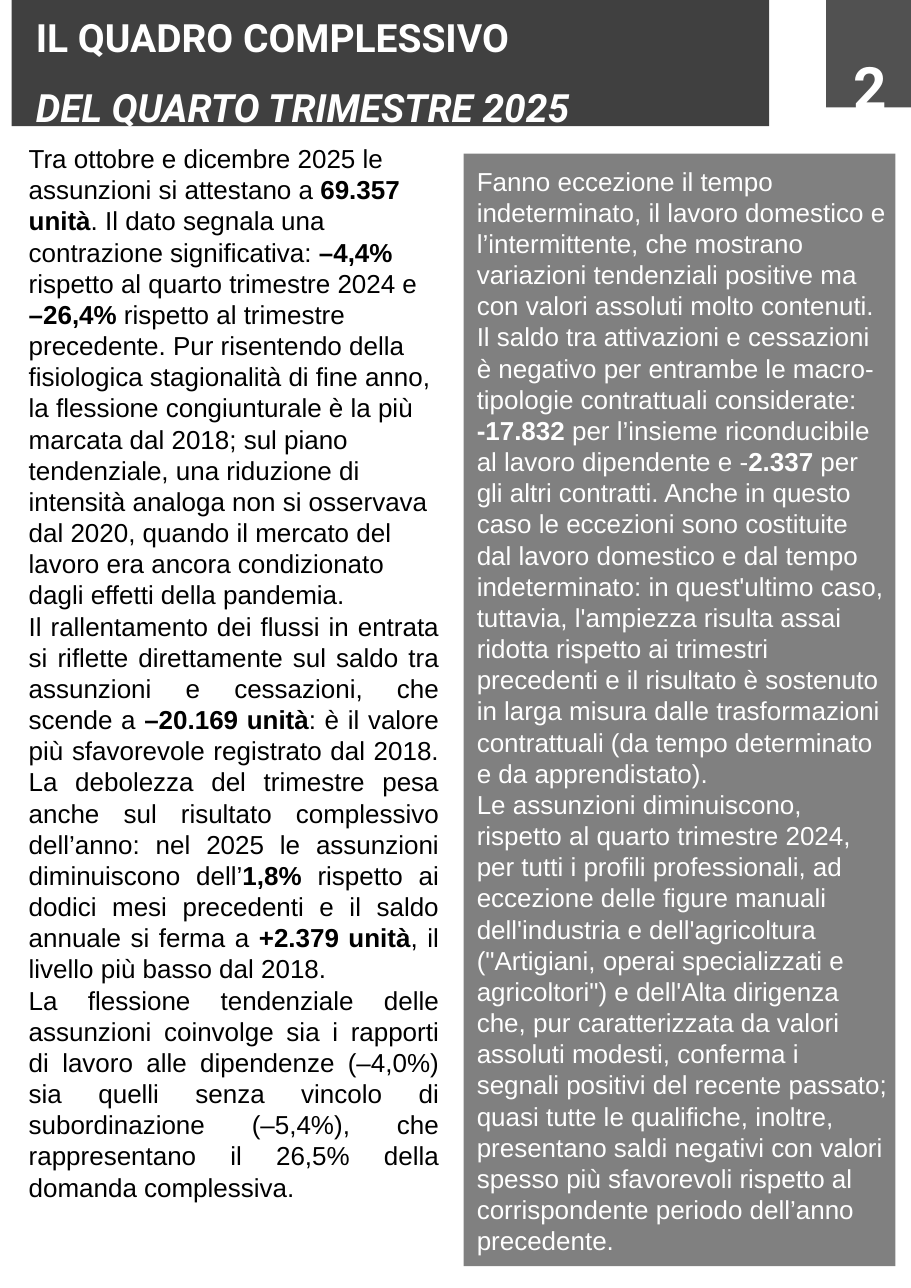
from pptx import Presentation, util as u
from pptx.dml.color import RGBColor
from pptx.enum import shapes, text

COLORS = {"band": "404040", "tab": "515151", "panel": "808080",
          "light": "FFFFFF", "dark": "000000"}

TITLE = ["IL QUADRO COMPLESSIVO", "DEL QUARTO TRIMESTRE 2025"]

LEFT_TEXT = [
    "Tra ottobre e dicembre 2025 le assunzioni si attestano a **69.357 unità**. "
    "Il dato segnala una contrazione significativa: **–4,4%** rispetto al quarto "
    "trimestre 2024 e \n**–26,4%** rispetto al trimestre precedente. Pur risentendo "
    "della fisiologica stagionalità di fine anno, la flessione congiunturale è la più "
    "marcata dal 2018; sul piano tendenziale, una riduzione di intensità analoga non si "
    "osservava dal 2020, quando il mercato del lavoro era ancora condizionato dagli "
    "effetti della pandemia.",
    "Il rallentamento dei flussi in entrata si riflette direttamente sul saldo tra "
    "assunzioni e cessazioni, che scende a **–20.169 unità**: è il valore più "
    "sfavorevole registrato dal 2018. La debolezza del trimestre pesa anche sul "
    "risultato complessivo dell’anno: nel 2025 le assunzioni diminuiscono "
    "dell’**1,8%** rispetto ai dodici mesi precedenti e il saldo annuale si ferma a "
    "**+2.379 unità**, il livello più basso dal 2018.",
    "La flessione tendenziale delle assunzioni coinvolge sia i rapporti di lavoro alle "
    "dipendenze (–4,0%) sia quelli senza vincolo di subordinazione (–5,4%), che "
    "rappresentano il 26,5% della domanda complessiva.",
]

RIGHT_TEXT = [
    "Fanno eccezione il tempo indeterminato, il lavoro domestico e l’intermittente, che "
    "mostrano variazioni tendenziali positive ma con valori assoluti molto contenuti.",
    "Il saldo tra attivazioni e cessazioni è negativo per entrambe le macro-tipologie "
    "contrattuali considerate: \n**-17.832** per l’insieme riconducibile al lavoro "
    "dipendente e -**2.337** per gli altri contratti. Anche in questo caso le eccezioni "
    "sono costituite dal lavoro domestico e dal tempo indeterminato: in quest'ultimo "
    "caso, tuttavia, l'ampiezza risulta assai ridotta rispetto ai trimestri precedenti e "
    "il risultato è sostenuto in larga misura dalle trasformazioni contrattuali (da tempo "
    "determinato e da apprendistato).",
    "Le assunzioni diminuiscono, rispetto al quarto trimestre 2024, per tutti i profili "
    "professionali, ad eccezione delle figure manuali dell'industria e dell'agricoltura "
    "(\"Artigiani, operai specializzati e agricoltori\") e dell'Alta dirigenza che, pur "
    "caratterizzata da valori assoluti modesti, conferma i segnali positivi del recente "
    "passato; quasi tutte le qualifiche, inoltre, presentano saldi negativi con valori "
    "spesso più sfavorevoli rispetto al corrispondente periodo dell’anno precedente.",
]


def style(p, name, size, color, bold=None):
    """Set the font of a whole paragraph."""
    p.font.name, p.font.size, p.font.bold = name, u.Pt(size), bold
    p.font.color.rgb = RGBColor.from_string(COLORS[color])


def add_block(s, x, y, w, h, color):
    """Add a plain filled rectangle."""
    sp = s.shapes.add_shape(shapes.MSO_SHAPE.RECTANGLE, *map(u.Inches, (x, y, w, h)))
    sp.shadow.inherit = False
    sp.fill.solid()
    sp.fill.fore_color.rgb = RGBColor.from_string(COLORS[color])
    sp.line.fill.background()
    return sp


def set_frame(tf, inset):
    """Wrap text from the top with the given vertical inset."""
    tf.word_wrap = True
    tf.vertical_anchor = text.MSO_ANCHOR.TOP
    tf.margin_left = tf.margin_right = u.Inches(0.1)
    tf.margin_top = tf.margin_bottom = u.Inches(inset)


def add_text(s, x, y, w, h, inset=0.1):
    """Add an empty text box and return its frame."""
    tf = s.shapes.add_textbox(*map(u.Inches, (x, y, w, h))).text_frame
    set_frame(tf, inset)
    return tf


def add_header(s, x, y, w, h):
    """Place the title over its dark band."""
    band = add_block(s, x, y, w, h, "band")
    title = s.shapes.title
    band.element.addnext(title.element)
    title.left, title.top = u.Inches(x + 0.21), u.Inches(y - 0.11)
    title.width, title.height = u.Inches(w + 1.04), u.Inches(h + 0.01)
    tf = title.text_frame
    set_frame(tf, 0.1)
    tf.auto_size = text.MSO_AUTO_SIZE.NONE
    tf.text = "\n".join(TITLE)
    for p in tf.paragraphs:
        p.alignment = text.PP_ALIGN.LEFT
        p.line_spacing = 1.5
        style(p, "Roboto", 36, "light", True)
    tf.paragraphs[-1].font.italic = True


def add_page_tab(s, x, y, w, h):
    """Place the page number on its corner tab."""
    add_block(s, x, y, w, h, "tab")
    p = add_text(s, x + 0.26, y + 0.19, 0.64, 1.08).paragraphs[0]
    p.text = "2"
    p.line_spacing = 1.5
    style(p, "Roboto", 54, "light", True)


def fill_column(tf, paragraphs, color):
    """Write paragraphs whose bold parts stand between double asterisks."""
    for n, content in enumerate(paragraphs):
        p = tf.add_paragraph() if n else tf.paragraphs[0]
        style(p, "Arial", 24, color)
        for i, part in enumerate(content.split("**")):
            r = p.add_run()
            r.text = part.rstrip("\n")
            if i % 2:
                r.font.bold = True
            if part.endswith("\n"):
                p.add_line_break()


def add_left_column(s, x, y, w, h):
    """Place the dark text, justified after its first paragraph."""
    tf = add_text(s, x, y, w, h)
    fill_column(tf, LEFT_TEXT, "dark")
    for p in tf.paragraphs[1:]:
        p.alignment = text.PP_ALIGN.JUSTIFY


def add_right_panel(s, x, y, w, h):
    """Place the light text on its grey panel."""
    add_block(s, x, y, w, h, "panel")
    tf = add_text(s, x + 0.07, y + 0.1, w - 0.08, h + 0.36, 0.05)
    tf.auto_size = text.MSO_AUTO_SIZE.SHAPE_TO_FIT_TEXT
    fill_column(tf, RIGHT_TEXT, "light")


def main():
    """Build and save the slide."""
    prs = Presentation()
    prs.slide_width, prs.slide_height = u.Inches(11.69), u.Inches(16.53)
    s = prs.slides.add_slide(prs.slide_layouts.get_by_name("Title Only"))
    add_right_panel(s, 5.95, 1.97, 5.54, 14.28)
    add_header(s, 0.15, -0.12, 9.72, 1.74)
    add_left_column(s, 0.27, 1.73, 5.46, 13.91)
    add_page_tab(s, 10.6, -0.08, 1.1, 1.46)
    prs.save("out.pptx")


if __name__ == "__main__":
    main()
